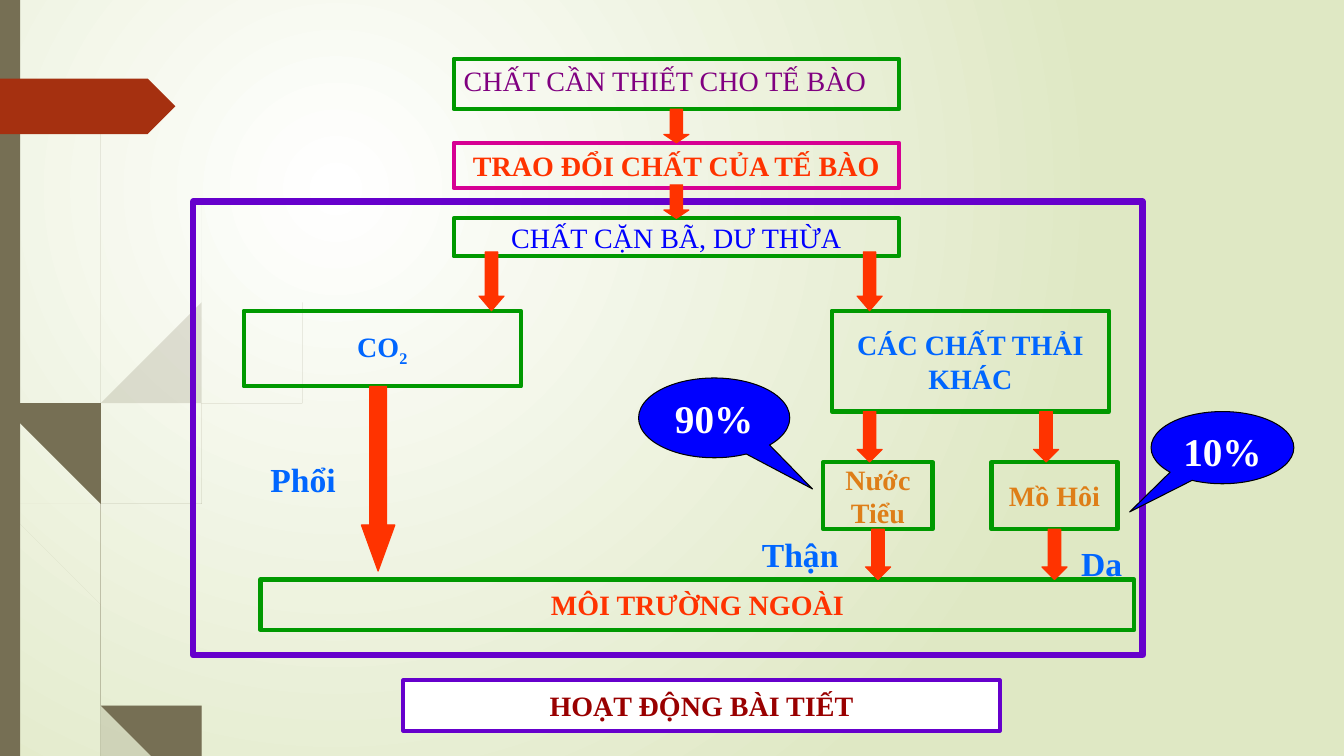
from lxml.etree import SubElement
from pptx import Presentation
from pptx.dml.color import RGBColor
from pptx.enum.shapes import MSO_SHAPE
from pptx.enum.text import MSO_ANCHOR, PP_ALIGN
from pptx.oxml.ns import qn
from pptx.util import Inches, Pt

UNIT = Inches(1) / 12
GREEN, PURPLE, RED, BLUE = "009900", "6600CC", "FF3300", "0066FF"
OLIVE, ORANGE = "766F54", "DE7E18"

deck = Presentation()
deck.slide_width, deck.slide_height = Inches(13.33), Inches(7.5)
slide = deck.slides.add_slide(deck.slide_layouts[6])


def paint(shape, fill=None, line=None, width=0.75):
    shape.shadow.inherit = False
    for part, color in ((shape.fill, fill), (shape.line.fill, line)):
        if color:
            part.solid()
            part.fore_color.rgb = RGBColor.from_string(color)
        else:
            part.background()
    if line:
        shape.line.width = Pt(width)


def write(shape, text, size, color, bold=True, align=PP_ALIGN.CENTER, anchor=MSO_ANCHOR.MIDDLE):
    frame = shape.text_frame
    frame.word_wrap = True
    frame.vertical_anchor = anchor
    para = frame.paragraphs[0]
    para.alignment = align
    run = para.add_run()
    run.text = text
    run.font.name, run.font.size, run.font.bold = "Times New Roman", Pt(size), bold
    run.font.color.rgb = RGBColor.from_string(color)
    return run


back = slide.background.fill
back.gradient()
for stop, color in zip(back.gradient_stops, ("FFFFFF", "DFE8C4")):
    stop.color.rgb = RGBColor.from_string(color)
grad = slide.background._cSld.find(".//" + qn("a:gradFill"))
grad.remove(grad.find(qn("a:lin")))
round_path = SubElement(grad, qn("a:path"), {"path": "circle"})
SubElement(round_path, qn("a:fillToRect"), {"l": "50000", "t": "50000", "r": "100000", "b": "100000"})

wisps = [
    (20, [(0, 2.9), (0.14, 3.6), (0.4, 4.74), (0.6, 5.22), (0.86, 5.99), (1.25, 6.93), (1.52, 7.5)]),
    (20, [(0.11, 3.5), (0.3, 4.7), (0.67, 6.2), (0.93, 6.88), (1.21, 7.5)]),
    (20, [(3.12, 1.53), (2.68, 1.98), (2.28, 2.45), (1.59, 3.48), (1.08, 4.61),
          (0.86, 5.85), (0.89, 6.46), (0.97, 6.9), (1.21, 7.5)]),
    (100, [(0.04, 0), (0.08, 1.1), (0.18, 2.33), (0.34, 3.55), (0.57, 4.77),
           (0.7, 5.56), (0.95, 6.58), (1.14, 7.15), (1.29, 7.5)]),
    (100, [(0.7, 1.41), (0.62, 1.93), (0.57, 2.45), (0.53, 3.49), (0.56, 4.5),
           (0.62, 4.88), (0.9, 5.91), (1.08, 6.43), (1.34, 7.07), (1.54, 7.5)]),
    (100, [(2.6, 3.44), (2.31, 3.74), (2.04, 4.06), (1.57, 4.75), (1.23, 5.51),
           (1.08, 6.32), (1.13, 6.9), (1.21, 7.17), (1.34, 7.5)]),
]
for alpha, knots in wisps:
    ends = [knots[0], *knots, knots[-1]]
    spine = []
    for a, b, c, d in zip(ends, ends[1:], ends[2:], ends[3:]):
        for step in range(8):
            t = step / 8
            spine.append([
                (2 * q + (r - p) * t + (2 * p - 5 * q + 4 * r - s) * t**2
                 + (3 * q - p - 3 * r + s) * t**3) / 2
                for p, q, r, s in zip(a, b, c, d)
            ])
    spine.append(knots[-1])
    half = [min(0.025, 0.004 + 0.04 * i / len(spine)) for i in range(len(spine))]
    left = [(x - h, y) for (x, y), h in zip(spine, half)]
    right = [(x + h, y) for (x, y), h in zip(spine, half)]
    edge = [(max(x, 0), y) for x, y in left + right[::-1]]
    pen = slide.shapes.build_freeform(*edge[0], scale=Inches(1))
    pen.add_line_segments(edge[1:], close=True)
    wisp = pen.convert_to_shape()
    paint(wisp, OLIVE)
    tone = wisp._element.spPr.find(qn("a:solidFill"))[0]
    SubElement(tone, qn("a:alpha"), {"val": str(alpha * 1000)})

bar = slide.shapes.add_shape(MSO_SHAPE.RECTANGLE, 0, 0, Inches(0.2), deck.slide_height)
paint(bar, OLIVE)
tag = slide.shapes.add_shape(MSO_SHAPE.PENTAGON, 0, Inches(0.78), Inches(1.74), Inches(0.55))
paint(tag, "A53010")

boxes = [
    (54, 7, 53, 6, GREEN, "CHẤT CẦN THIẾT CHO TẾ BÀO", "800080", False),
    (54, 17, 53, 5.4, "D60093", "TRAO ĐỔI CHẤT CỦA TẾ BÀO", RED, True),
    (54, 26, 53, 4.5, GREEN, "CHẤT CẶN BÃ, DƯ THỪA", "0000FF", False),
    (23, 24, 113, 54, PURPLE, "", "", False),
    (99, 37, 33, 12, GREEN, "CÁC CHẤT THẢI KHÁC", BLUE, True),
    (98, 55, 13, 8, GREEN, "Nước Tiểu", ORANGE, True),
    (118, 55, 15, 8, GREEN, "Mồ Hôi", ORANGE, True),
    (29, 37, 33, 9, GREEN, "CO", BLUE, True),
    (31, 69, 104, 6, GREEN, "MÔI TRƯỜNG NGOÀI", RED, True),
    (48, 81, 71, 6, PURPLE, "HOẠT ĐỘNG BÀI TIẾT", "990000", True),
]
for row, (*place, edge, text, color, bold) in enumerate(boxes):
    box = slide.shapes.add_shape(MSO_SHAPE.RECTANGLE, *[int(n * UNIT) for n in place])
    paint(box, "FFFFFF" if row == len(boxes) - 1 else None, edge, 3 if text else 4.5)
    if text:
        top = row == 0
        write(box, text, 20, color, bold, PP_ALIGN.LEFT if top else PP_ALIGN.CENTER,
              MSO_ANCHOR.TOP if top else MSO_ANCHOR.MIDDLE)
    if text == "CO":
        low = write(box, "2", 20, color)
        low._r.get_or_add_rPr().set("baseline", "-25000")

arrows = [
    (43, 46, 4, 22), (79, 22, 3, 4), (57, 30, 3, 7), (102, 30, 3, 7), (102, 49, 3, 6),
    (123, 49, 3, 6), (103, 63, 3, 6), (79, 13, 3, 4), (124, 63, 3, 6),
]
for x, y, w, h in arrows:
    arrow = slide.shapes.add_shape(MSO_SHAPE.DOWN_ARROW, *[int(n * UNIT) for n in (x, y, w, h)])
    arrow.adjustments[1] = h / w / 4
    paint(arrow, RED, RED)

for x, y, text in ((31, 54, "Phổi"), (89.5, 63, "Thận"), (127.5, 64, "Da")):
    label = slide.shapes.add_textbox(*[int(n * UNIT) for n in (x, y, 14, 6)])
    write(label, text, 24, BLUE, align=PP_ALIGN.LEFT, anchor=MSO_ANCHOR.TOP)

for x, y, w, h, side, text in ((76, 45, 18, 9.5, 1, "90%"), (137, 49, 17, 8.6, -1, "10%")):
    call = slide.shapes.add_shape(MSO_SHAPE.OVAL_CALLOUT, *[int(n * UNIT) for n in (x, y, w, h)])
    call.adjustments[0], call.adjustments[1] = 0.65 * side, 0.89
    paint(call, "0000FF", "000000")
    write(call, text, 28, "FFFFFF", anchor=MSO_ANCHOR.TOP)

deck.save("out.pptx")
